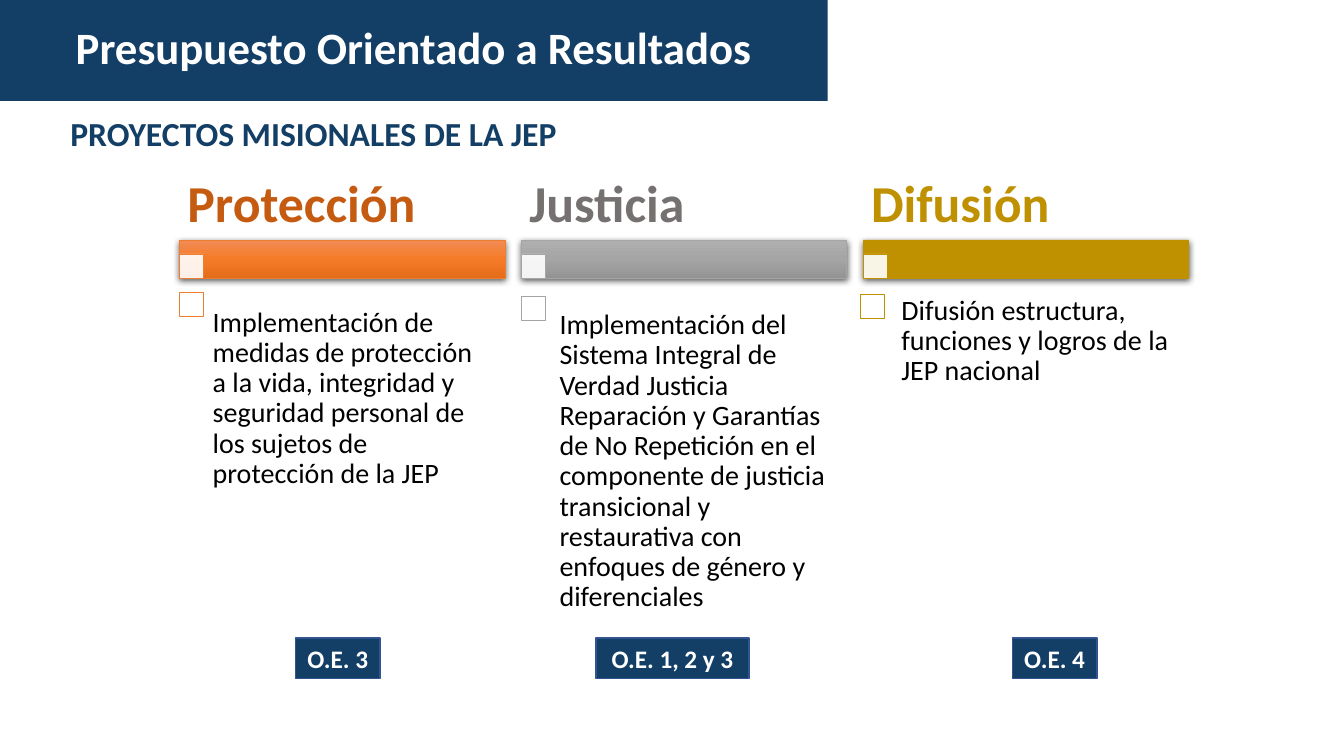
from pptx import Presentation
from pptx.util import Inches, Pt
from pptx.dml.color import RGBColor
from pptx.enum.shapes import MSO_SHAPE as SHAPE
from pptx.enum.text import MSO_ANCHOR as ANCHOR, PP_ALIGN as ALIGN
from pptx.oxml import parse_xml
from pptx.oxml.ns import nsdecls, qn
from copy import deepcopy

NAVY, WHITE, BLACK = "133E65", "FFFFFF", "000000"
SHADOW = (f'<a:outerShdw {nsdecls("a")} blurRad="57150" dist="19050" dir="5400000" algn="ctr" '
          'rotWithShape="0"><a:srgbClr val="000000"><a:alpha val="63000"/></a:srgbClr></a:outerShdw>')


def rgb(value):
    return RGBColor.from_string(value)


def write(shape, text, size, color, bold=True, align=ALIGN.LEFT, anchor=ANCHOR.MIDDLE,
          inset=(0.1, 0.05), spacing=0.9, wrap=True):
    tf = shape.text_frame
    tf.word_wrap = wrap
    tf.vertical_anchor = anchor
    tf.margin_left = tf.margin_right = Inches(inset[0])
    tf.margin_top = tf.margin_bottom = Inches(inset[1])
    p = tf.paragraphs[0]
    p.alignment, p.line_spacing, p.space_before = align, spacing, Pt(0)
    r = p.add_run()
    r.text = text
    r.font.name, r.font.size, r.font.bold = "Calibri", Pt(size), bold
    r.font.color.rgb = rgb(color)


class Deck:
    def __init__(self):
        self.prs = Presentation()
        self.prs.slide_width, self.prs.slide_height = Inches(13.33), Inches(7.5)
        self.s = self.prs.slides.add_slide(self.prs.slide_layouts[5])

    def title(self, text, x, y, w, h):
        sp = self.s.shapes.title
        sp.left, sp.top, sp.width, sp.height = map(Inches, (x, y, w, h))
        sp.fill.solid()
        sp.fill.fore_color.rgb = rgb(NAVY)
        write(sp, text, 32, WHITE, align=ALIGN.CENTER)

    def text(self, text, x, y, w, h, size, color, **fmt):
        sp = self.s.shapes.add_textbox(*map(Inches, (x, y, w, h)))
        write(sp, text, size, color, **fmt)

    def rect(self, x, y, w, h, fill, line, weight=0.5, alpha=None, shadow=False):
        sp = self.s.shapes.add_shape(SHAPE.RECTANGLE, *map(Inches, (x, y, w, h)))
        sp.shadow.inherit = False
        sp.line.color.rgb, sp.line.width = rgb(line), Pt(weight)
        spPr = sp.element.spPr
        if isinstance(fill, tuple):
            sp.fill.gradient()
            sp.fill.gradient_angle = 270
            stops = spPr.find(".//" + qn("a:gsLst"))
            stops.insert(1, deepcopy(stops[0]))
            for i, (stop, color) in enumerate(zip(sp.fill.gradient_stops, fill)):
                stop.position, stop.color.rgb = i / 2, rgb(color)
        else:
            sp.fill.solid()
            sp.fill.fore_color.rgb = rgb(fill)
        if alpha:
            color = spPr.find(qn("a:solidFill"))[0]
            color.append(parse_xml(f'<a:alpha {nsdecls("a")} val="{alpha * 1000}"/>'))
        if shadow:
            spPr.find(qn("a:effectLst")).append(parse_xml(SHADOW))
        return sp

    def badge(self, text, x, w):
        sp = self.rect(x, 6.33, w, 0.4, NAVY, "325491", weight=1)
        write(sp, text, 18, WHITE, align=ALIGN.CENTER, anchor=ANCHOR.TOP, spacing=1, wrap=False)

    def column(self, x, name, name_color, bar, accent, box, body, body_at):
        self.rect(x, 2.38, 3.23, 0.38, bar, accent, shadow=True)
        self.rect(x, 2.52, 0.24, 0.24, WHITE, accent, alpha=90)
        self.text(name, x, 1.7, 3.23, 0.68, 37, name_color, inset=(0.08, 0.05))
        self.rect(*box, 0.24, 0.24, WHITE, accent)
        self.text(body, *body_at, 20, BLACK, bold=False, inset=(0.16, 0.16))


# Column name, name colour, bar fill, accent, checkbox position, text, text position
COLUMNS = [
    ("Protección", "C55A11", ("F18C57", "F67B28", "E56C19"), "ED7D31", (1.78, 2.9),
     "Implementación de medidas de protección a la vida, integridad y seguridad personal "
     "de los sujetos de protección de la JEP", (1.95, 2.79, 3, 2.33)),
    ("Justicia", "767171", ("AFAFAF", "A5A5A5", "939393"), "A5A5A5", (5.17, 2.94),
     "Implementación del Sistema Integral de Verdad Justicia Reparación y Garantías de No "
     "Repetición en el componente de justicia transicional y restaurativa con enfoques de "
     "género y diferenciales", (5.39, 2.83, 3, 3.5)),
    ("Difusión", "BF9000", "BF9000", "BF9000", (8.53, 2.92),
     "Difusión estructura, funciones y logros de la JEP nacional", (8.78, 2.75, 3, 1.27)),
]
BADGES = [("O.E. 3", 2.93, 0.84), ("O.E. 1, 2 y 3", 5.91, 1.52), ("O.E. 4", 10.04, 0.84)]


def main():
    deck = Deck()

    # Headings
    deck.title("Presupuesto Orientado a Resultados", 0, 0, 8.21, 1)
    deck.text("PROYECTOS MISIONALES DE LA JEP", 0.6, 1.12, 6.34, 0.58, 24, NAVY,
              anchor=ANCHOR.TOP)

    # Project columns
    for i, column in enumerate(COLUMNS):
        deck.column(1.78 + 3.39 * i, *column)

    # Strategic objectives
    for badge in BADGES:
        deck.badge(*badge)

    deck.prs.save("out.pptx")


if __name__ == "__main__":
    main()
